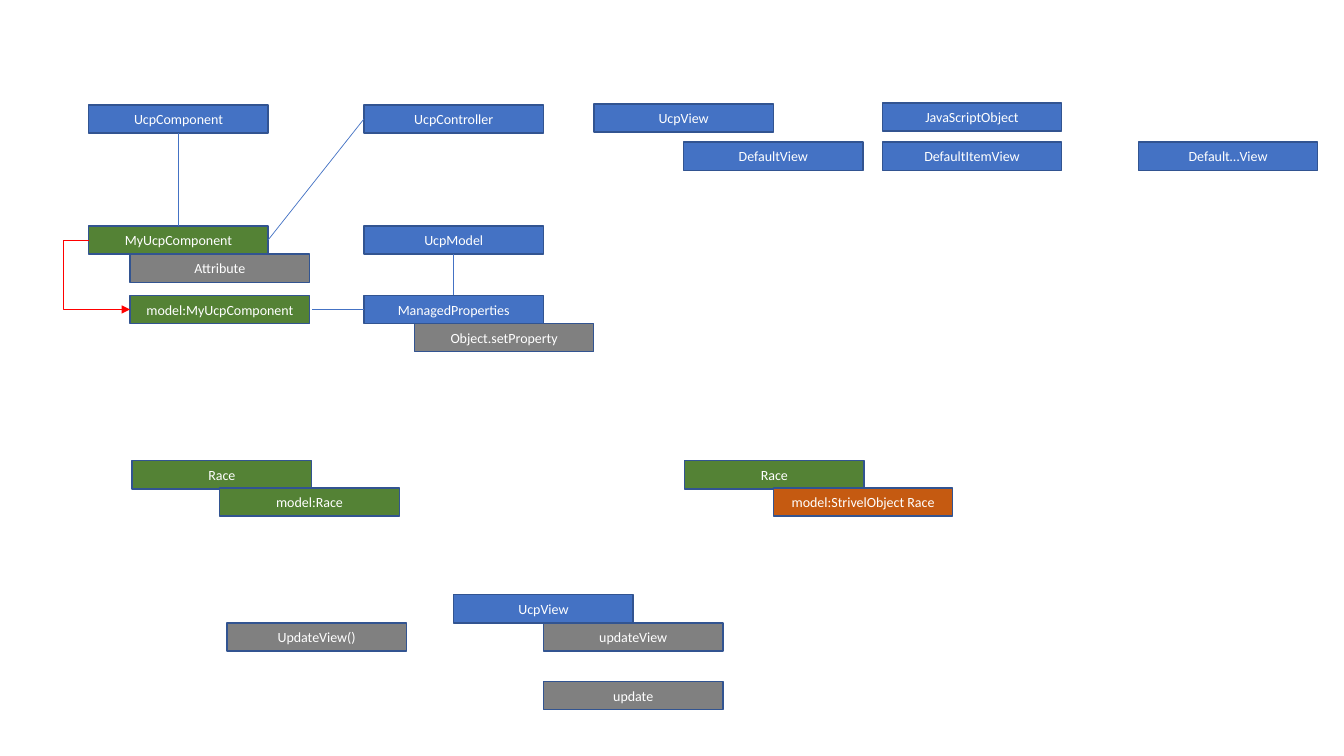
from dataclasses import dataclass

from lxml import etree
from pptx import Presentation
from pptx import util as u
from pptx.dml.color import RGBColor
from pptx.enum import shapes, text
from pptx.oxml import ns
from pptx.shapes.connector import Connector
from pptx.slide import Slide

PX = 9144  # EMU per px, 100 px to the inch
SLIDE_WIDTH, SLIDE_HEIGHT = 1333, 750
BOX_WIDTH, BOX_HEIGHT = 178, 28

WHITE = RGBColor(0xFF, 0xFF, 0xFF)
BLUE = RGBColor(0x44, 0x72, 0xC4)
NAVY = RGBColor(0x32, 0x54, 0x91)
GREEN = RGBColor(0x54, 0x82, 0x35)
GRAY = RGBColor(0x80, 0x80, 0x80)
ORANGE = RGBColor(0xC5, 0x5A, 0x11)
RED = RGBColor(0xFF, 0x00, 0x00)


@dataclass(frozen=True)
class ClassBox:
    label: str
    left: int
    top: int
    fill: RGBColor = BLUE


@dataclass(frozen=True)
class Link:
    start: tuple[int, int]
    end: tuple[int, int]
    color: RGBColor = BLUE
    kind: shapes.MSO_CONNECTOR = shapes.MSO_CONNECTOR.STRAIGHT


BOXES = [
    ClassBox("UcpComponent", 88, 104),
    ClassBox("MyUcpComponent", 88, 224, GREEN),
    ClassBox("UcpModel", 361, 224),
    ClassBox("UcpController", 361, 104),
    ClassBox("UcpView", 589, 103),
    ClassBox("DefaultView", 678, 141),
    ClassBox("DefaultItemView", 875, 141),
    ClassBox("Default…View", 1129, 141),
    ClassBox("JavaScriptObject", 875, 102),
    ClassBox("ManagedProperties", 361, 293),
    ClassBox("Object.setProperty", 411, 321, GRAY),
    ClassBox("Attribute", 129, 252, GRAY),
    ClassBox("model:MyUcpComponent", 129, 293, GREEN),
    ClassBox("Race", 131, 457, GREEN),
    ClassBox("model:Race", 218, 484, GREEN),
    ClassBox("UpdateView()", 225, 618, GRAY),
    ClassBox("updateView", 539, 618, GRAY),
    ClassBox("UcpView", 450, 590),
    ClassBox("update", 539, 676, GRAY),
    ClassBox("Race", 679, 457, GREEN),
    ClassBox("model:StrivelObject Race", 767, 484, ORANGE),
]

LINKS = [
    Link((266, 238), (361, 118)),
    Link((177, 132), (177, 224)),
    Link((450, 293), (450, 252)),
    Link((361, 307), (309, 307)),
]
MODEL_LINK = Link((88, 238), (129, 307), RED, shapes.MSO_CONNECTOR.ELBOW)
MODEL_LINK_BEND = -60600  # thousandths of a percent of the link's width


def draw_box(page: Slide, item: ClassBox) -> None:
    box = page.shapes.add_shape(
        shapes.MSO_SHAPE.RECTANGLE,
        item.left * PX, item.top * PX, BOX_WIDTH * PX, BOX_HEIGHT * PX,
    )
    box.shadow.inherit = False
    box.fill.solid()
    box.fill.fore_color.rgb = item.fill
    box.line.color.rgb = NAVY
    box.line.width = u.Pt(1)

    frame = box.text_frame
    frame.word_wrap = True
    frame.vertical_anchor = text.MSO_ANCHOR.MIDDLE
    para = frame.paragraphs[0]
    para.alignment = text.PP_ALIGN.CENTER
    span = para.add_run()
    span.text = item.label
    span.font.name = "Calibri"
    span.font.size = u.Pt(10)
    span.font.color.rgb = WHITE


def draw_link(page: Slide, link: Link) -> Connector:
    start_x, start_y = link.start
    end_x, end_y = link.end
    line = page.shapes.add_connector(
        link.kind, start_x * PX, start_y * PX, end_x * PX, end_y * PX
    )
    line.line.color.rgb = link.color
    line.line.width = u.Pt(0.5)
    etree.SubElement(line._element.spPr, ns.qn("a:effectLst"))
    return line


def add_arrow_and_bend(line: Connector, bend: int) -> None:
    """Put a triangle at the line's end and shift its middle segment."""
    properties = line._element.spPr
    outline = properties.find(ns.qn("a:ln"))
    etree.SubElement(outline, ns.qn("a:tailEnd"), type="triangle")
    geometry = properties.find(ns.qn("a:prstGeom"))
    adjustments = geometry.find(ns.qn("a:avLst"))
    if adjustments is None:
        adjustments = etree.SubElement(geometry, ns.qn("a:avLst"))
    etree.SubElement(adjustments, ns.qn("a:gd"), name="adj1", fmla=f"val {bend}")


def main() -> None:
    deck = Presentation()
    deck.slide_width = SLIDE_WIDTH * PX
    deck.slide_height = SLIDE_HEIGHT * PX
    page = deck.slides.add_slide(deck.slide_layouts[6])

    for item in BOXES:
        draw_box(page, item)
    for link in LINKS:
        draw_link(page, link)
    add_arrow_and_bend(draw_link(page, MODEL_LINK), MODEL_LINK_BEND)

    deck.save("out.pptx")


if __name__ == "__main__":
    main()
